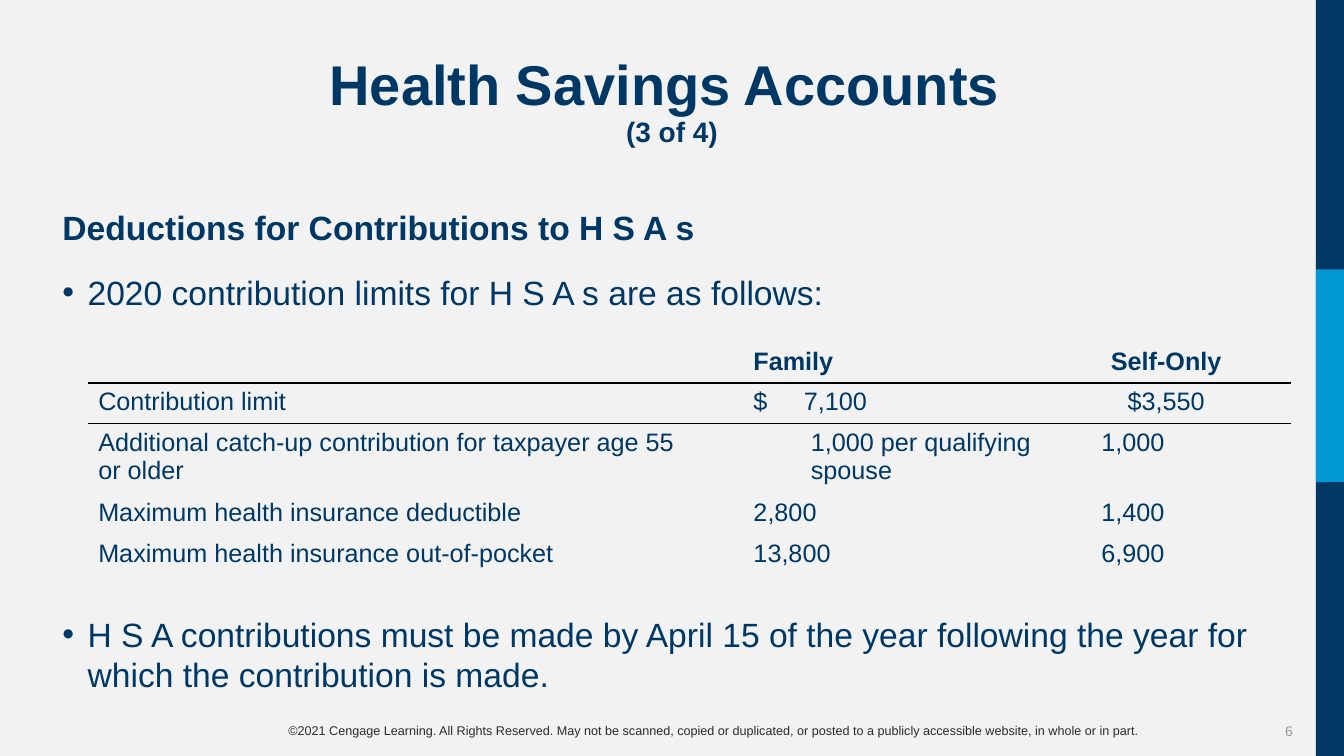
"""Build the Health Savings Accounts slide with the 2020 contribution limits."""
from lxml.etree import SubElement
from pptx import Presentation
from pptx.dml.color import RGBColor
from pptx.enum.shapes import MSO_SHAPE
from pptx.enum.text import MSO_ANCHOR, PP_ALIGN
from pptx.oxml.ns import qn
from pptx.util import Pt

COLORS = {
    "page": "F2F2F2",
    "navy": "003865",
    "sky": "0098D4",
    "copyright": "2A2B2D",
    "number": "96999E",
    "rule": "000000",
}


def write(frame, text, size, color="navy", bold=False, align=PP_ALIGN.LEFT,
          bullet=False, indent=0, tabs=(), before=0, after=0, first=True):
    """Write one paragraph into a text frame and return it."""
    paragraph = frame.paragraphs[0] if first else frame.add_paragraph()
    paragraph.text = text
    paragraph.alignment = align
    paragraph.space_before, paragraph.space_after = Pt(before), Pt(after)
    properties = paragraph._p.get_or_add_pPr()
    properties.set("marL", str(Pt(indent)))
    properties.set("indent", str(Pt(-indent if bullet else 0)))
    if bullet:
        bullet_color = SubElement(properties, qn("a:buClr"))
        SubElement(bullet_color, qn("a:srgbClr"), val=COLORS[color])
        SubElement(properties, qn("a:buFont"), typeface="Arial")
        SubElement(properties, qn("a:buChar"), char="•")
    else:
        SubElement(properties, qn("a:buNone"))
    if tabs:
        tab_list = SubElement(properties, qn("a:tabLst"))
        for position, kind in tabs:
            SubElement(tab_list, qn("a:tab"), pos=str(Pt(position)), algn=kind)
    for run in paragraph.runs:
        run.font.name, run.font.size, run.font.bold = "Arial", Pt(size), bold
        run.font.color.rgb = RGBColor.from_string(COLORS[color])
    return paragraph


def text_frame(left, top, width, height, anchor=MSO_ANCHOR.TOP):
    """Add a wrapping text box and return its text frame."""
    frame = slide.shapes.add_textbox(Pt(left), Pt(top), Pt(width), Pt(height)).text_frame
    frame.word_wrap = True
    frame.vertical_anchor = anchor
    return frame


presentation = Presentation()
presentation.slide_width, presentation.slide_height = Pt(960), Pt(540)
slide = presentation.slides.add_slide(presentation.slide_layouts[5])
slide.background.fill.solid()
slide.background.fill.fore_color.rgb = RGBColor.from_string(COLORS["page"])

for color, top, height in [("navy", 0, 540), ("sky", 192.5, 152)]:
    band = slide.shapes.add_shape(MSO_SHAPE.RECTANGLE, Pt(940), Pt(top), Pt(20), Pt(height))
    band.shadow.inherit = False
    band.fill.solid()
    band.fill.fore_color.rgb = RGBColor.from_string(COLORS[color])
    band.line.fill.background()

title = slide.shapes.title
title.left, title.top, title.width, title.height = Pt(37.5), Pt(37.5), Pt(885), Pt(96)
title.text_frame.vertical_anchor = MSO_ANCHOR.TOP
heading = write(title.text_frame, "Health Savings Accounts \v(3 of 4)", 40,
                bold=True, align=PP_ALIGN.CENTER)
heading.line_spacing = 0.9
heading.runs[1].font.size = Pt(20)

deductions = text_frame(37.5, 144, 885, 108)
write(deductions, "Deductions for Contributions to H S A s", 24, bold=True, after=8)
write(deductions, "2020 contribution limits for H S A s are as follows:", 24,
      bullet=True, indent=18, before=10, after=8, first=False)

CENTERED = {"align": PP_ALIGN.CENTER}
FAMILY_AMOUNT = {"tabs": [(121, "r")]}
SELF_AMOUNT = {"tabs": [(108, "r")]}
limits = [
    [("", {}), ("\tFamily", {"tabs": [(99.5, "ctr")]}), ("Self-Only", CENTERED)],
    [("Contribution limit", {}),
     ("\t$\t7,100", {"tabs": [(56, "l"), (121, "r")]}), ("$3,550", CENTERED)],
    [("Additional catch-up contribution for taxpayer age 55 or older", {}),
     ("1,000 per qualifying spouse", {"indent": 77}), ("\t1,000", SELF_AMOUNT)],
    [("Maximum health insurance deductible", {}),
     ("\t2,800", FAMILY_AMOUNT), ("\t1,400", SELF_AMOUNT)],
    [("Maximum health insurance out-of-pocket", {}),
     ("\t13,800", FAMILY_AMOUNT), ("\t6,900", SELF_AMOUNT)],
]
limits_table = slide.shapes.add_table(5, 3, Pt(63), Pt(244.8), Pt(859.5), Pt(158)).table
limits_table.first_row = limits_table.horz_banding = False
style_id = limits_table._tbl.tblPr.find(qn("a:tableStyleId"))
style_id.text = "{2D5ABB26-0587-4C30-8999-92F81FD0307C}"
for column, width in zip(limits_table.columns, [432, 248.5, 179]):
    column.width = Pt(width)
for row, height in zip(limits_table.rows, [27.6, 27.6, 47.6, 27.6, 27.6]):
    row.height = Pt(height)

for row_index, entries in enumerate(limits):
    for column_index, (entry, layout) in enumerate(entries):
        cell = limits_table.cell(row_index, column_index)
        write(cell.text_frame, entry, 18, bold=row_index == 0, **layout)
        if row_index < 2:
            edge = "a:lnB" if row_index == 0 else "a:lnT"
            rule = SubElement(cell._tc.get_or_add_tcPr(), qn(edge), w=str(Pt(1)))
            rule_fill = SubElement(rule, qn("a:solidFill"))
            SubElement(rule_fill, qn("a:srgbClr"), val=COLORS["rule"])
        cell.fill.background()

deadline = text_frame(37.5, 435, 885, 68)
write(deadline, "H S A contributions must be made by April 15 of the year following "
      "the year for which the contribution is made.", 24, bullet=True, indent=18, after=8)

copyright_line = text_frame(131, 512.5, 757, 18)
write(copyright_line, "©2021 Cengage Learning. All Rights Reserved. May not be scanned, "
      "copied or duplicated, or posted to a publicly accessible website, in whole or in part.",
      9, color="copyright", align=PP_ALIGN.CENTER)

page_number = text_frame(872.5, 507.5, 58, 29, anchor=MSO_ANCHOR.MIDDLE)
write(page_number, "6", 10, color="number", align=PP_ALIGN.RIGHT)

presentation.save("out.pptx")
